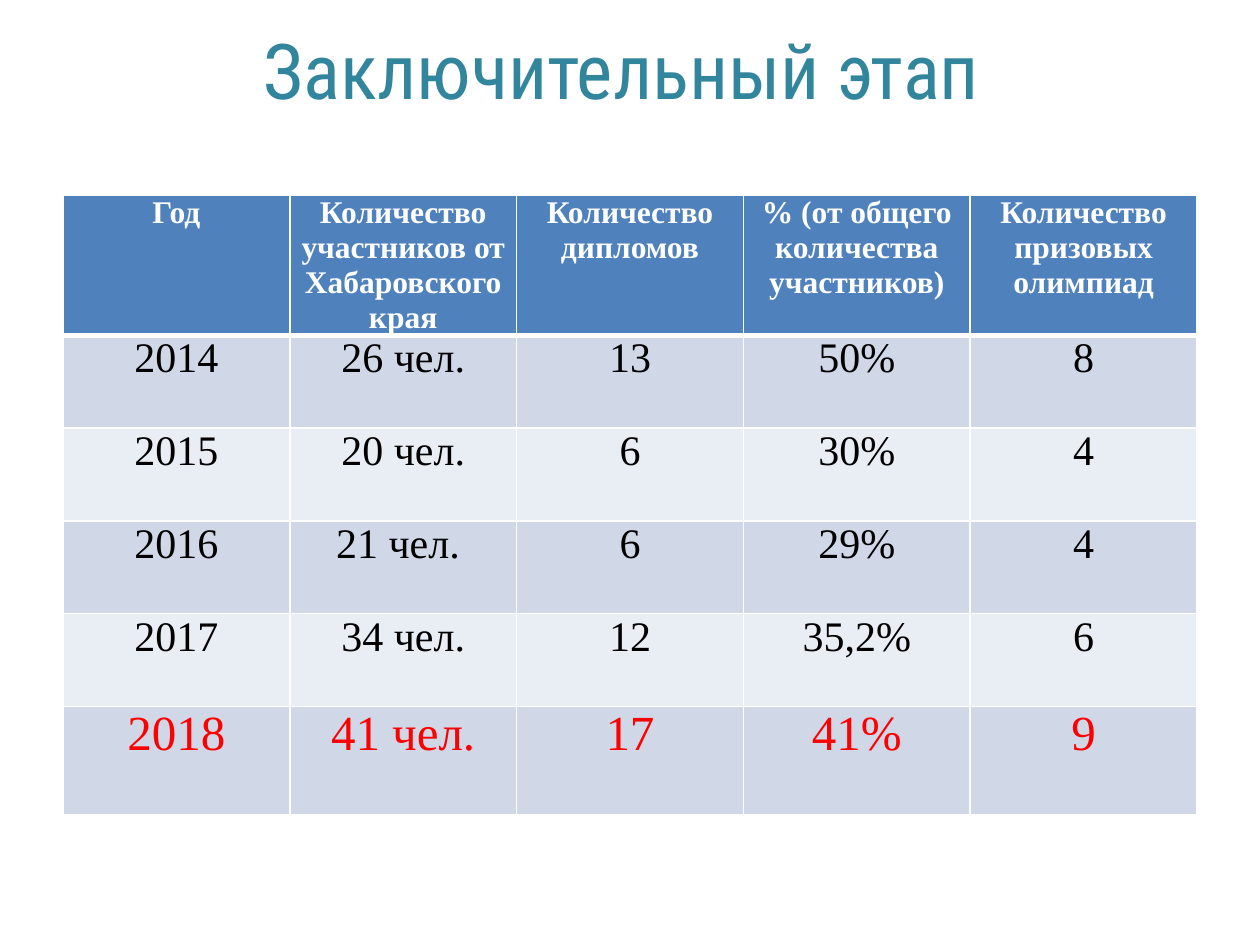
from lxml import etree
from pptx import Presentation
from pptx.dml.color import RGBColor
from pptx.enum.text import MSO_ANCHOR, PP_ALIGN
from pptx.oxml.ns import qn
from pptx.util import Cm, Pt

CENTER = PP_ALIGN.CENTER
MIDDLE = MSO_ANCHOR.MIDDLE

HUES = {
    "title": "31859C",
    "head": "4F81BD",
    "odd": "D0D8E8",
    "even": "E9EDF4",
    "white": "FFFFFF",
    "black": "000000",
    "red": "FF0000",
}

ROWS = [
    ("Год", "Количество участников от Хабаровского края",
     "Количество дипломов", "% (от общего количества участников)",
     "Количество призовых олимпиад"),
    ("2014", "26 чел.", "13", "50%", "8"),
    ("2015", "20 чел.", "6", "30%", "4"),
    ("2016", "21 чел. ", "6", "29%", "4"),
    ("2017", "34 чел.", "12", "35,2%", "6"),
    ("2018", "41 чел.", "17", "41%", "9"),
]


def hue(name):
    return RGBColor.from_string(HUES[name])


def style_text(frame, font, size, color, bold=False):
    para = frame.paragraphs[0]
    para.alignment = CENTER
    for run in para.runs:
        run.font.name = font
        run.font.size = Pt(size)
        run.font.bold = bold
        run.font.color.rgb = hue(color)
    return para


def add_title(slide, text):
    title = slide.shapes.title
    title.left, title.top = Cm(1.3), Cm(-0.08)
    title.width, title.height = Cm(22.83), Cm(3.18)
    frame = title.text_frame
    frame.text = text
    frame.word_wrap = True
    frame.vertical_anchor = MIDDLE
    style_text(frame, "Roboto Condensed", 44, "title").line_spacing = 0.9


def set_edges(cell, top, bottom):
    props = cell._tc.get_or_add_tcPr()
    for side, width in zip("LRTB", (1, 1, top, bottom)):
        line = etree.SubElement(props, qn(f"a:ln{side}"), w=str(Pt(width)))
        fill = etree.SubElement(line, qn("a:solidFill"))
        etree.SubElement(fill, qn("a:srgbClr"), val=HUES["white"])


def fill_cell(cell, text, back, size, color, bold):
    cell.margin_left = cell.margin_right = Cm(0.18)
    cell.margin_top = cell.margin_bottom = 0
    cell.fill.solid()
    cell.fill.fore_color.rgb = hue(back)
    cell.text_frame.text = text
    style_text(cell.text_frame, "Times New Roman", size, color, bold)


def row_style(index):
    """Return height in cm, back, text size, text color and bold."""
    if index == 0:
        return 2.82, "head", 18, "white", True
    back = "odd" if index % 2 else "even"
    if index == len(ROWS) - 1:
        return 2.18, back, 28, "red", False
    return 1.87, back, 24, "black", False


def add_grid(slide):
    count = len(ROWS[0])
    high = sum(row_style(i)[0] for i in range(len(ROWS)))
    grid = slide.shapes.add_table(len(ROWS), count, Cm(1.27), Cm(3.94),
                                  Cm(22.86), Cm(high)).table
    for i, row in enumerate(ROWS):
        tall, *look = row_style(i)
        grid.rows[i].height = Cm(tall)
        for j, text in enumerate(row):
            cell = grid.cell(i, j)
            # Thick rule between the header and the body
            set_edges(cell, 3 if i == 1 else 1, 3 if i == 0 else 1)
            fill_cell(cell, text, *look)


def main():
    deck = Presentation()
    deck.slide_width, deck.slide_height = Cm(25.4), Cm(19.05)
    slide = deck.slides.add_slide(deck.slide_layouts[5])
    # Results by year
    add_grid(slide)
    # Heading
    add_title(slide, "Заключительный этап ")
    deck.save("out.pptx")


if __name__ == "__main__":
    main()
